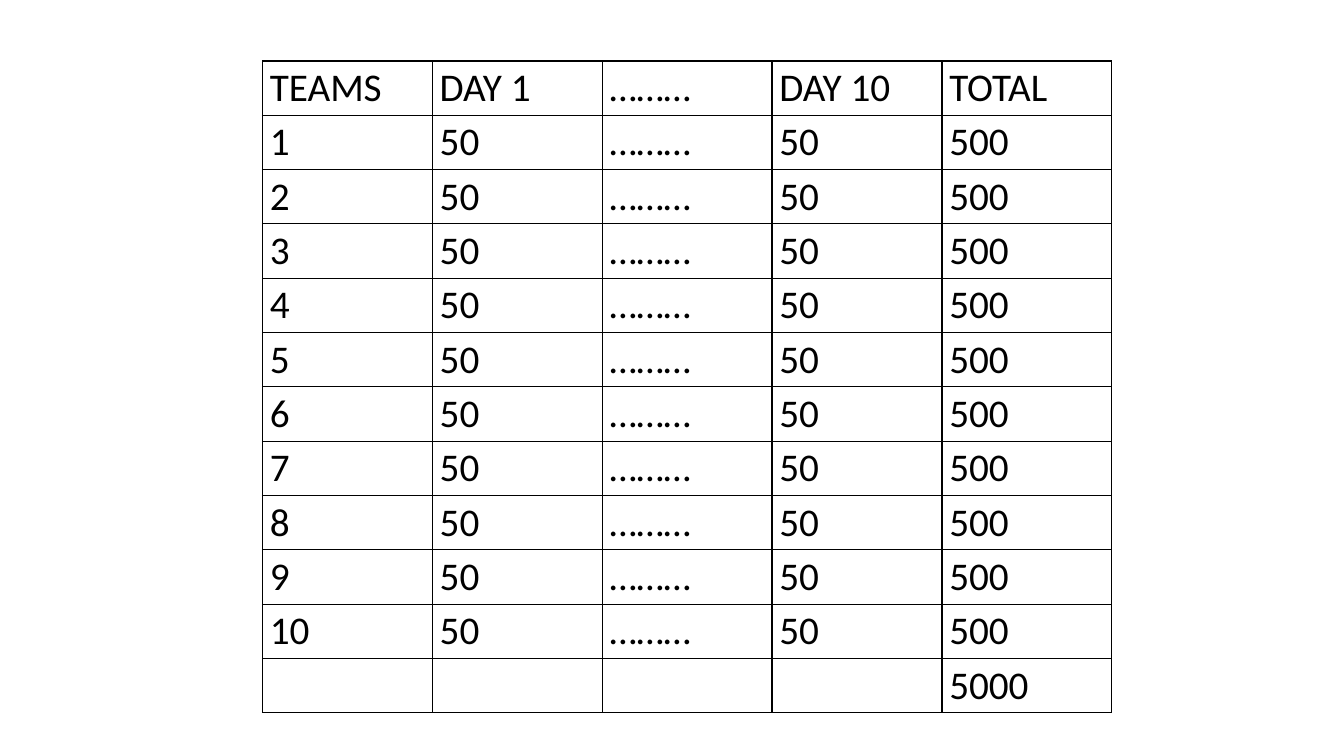
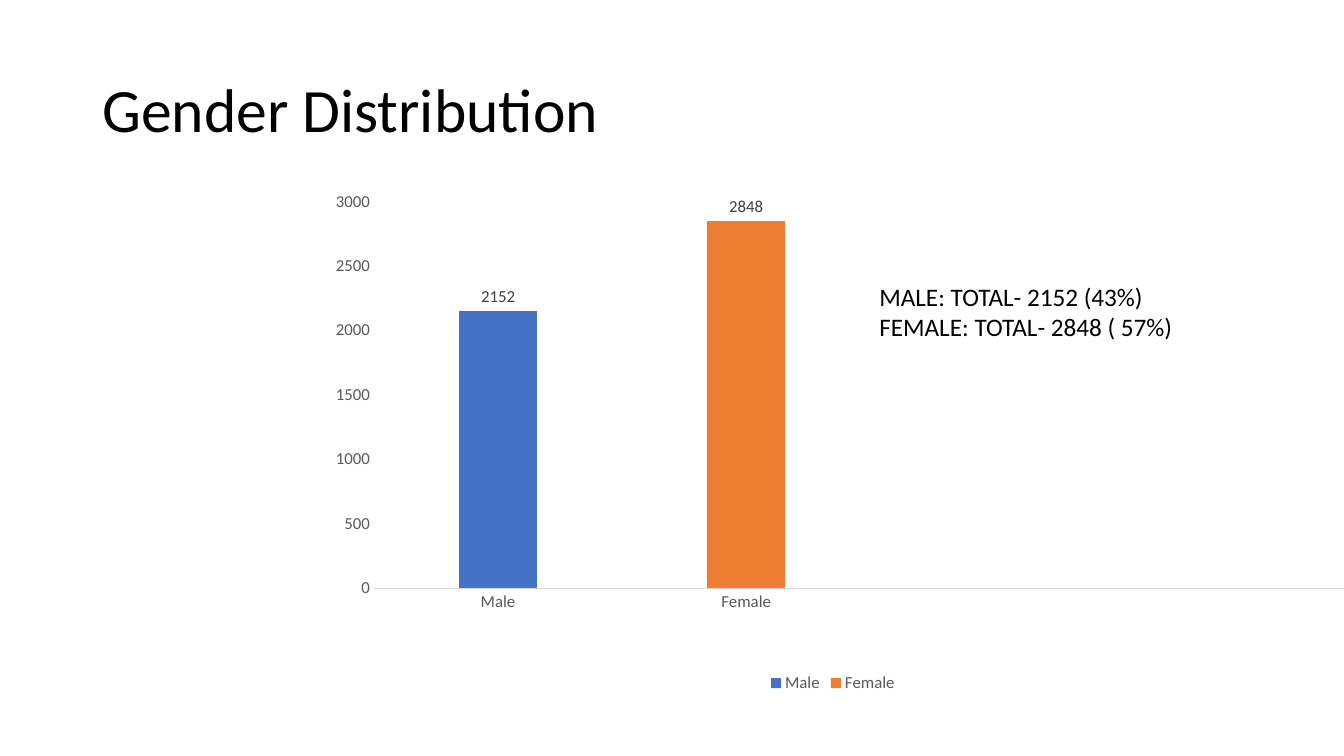
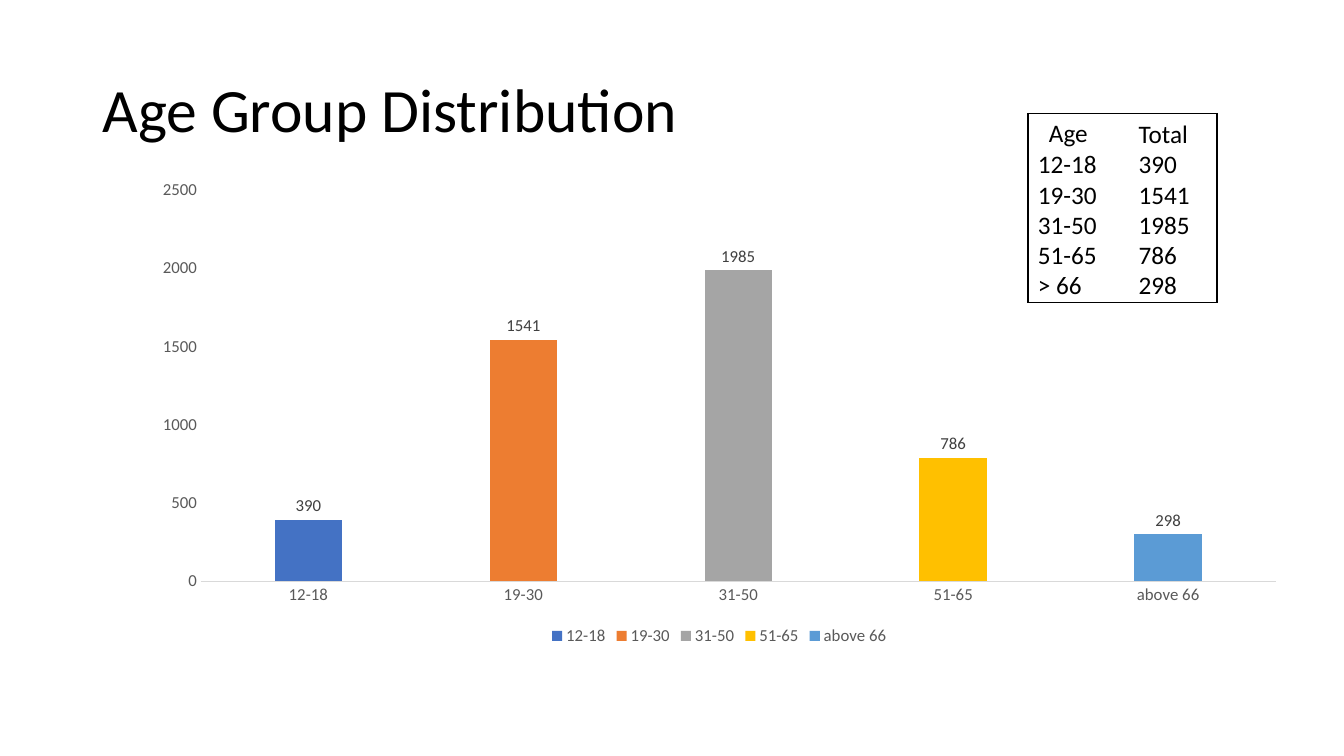
from lxml import etree
from pptx import Presentation
from pptx import util as u
from pptx.chart import data as chart_data
from pptx.dml.color import RGBColor
from pptx.enum import chart as chart_enum, text
from pptx.oxml import ns

PX = 9525
FONT = "Calibri"
BLACK = RGBColor(0, 0, 0)
AXIS_TEXT = RGBColor(0x59, 0x59, 0x59)
LABEL_TEXT = RGBColor(0x40, 0x40, 0x40)
AXIS_LINE = RGBColor(0xD9, 0xD9, 0xD9)
BAR_COLOURS = [
    RGBColor(0x44, 0x72, 0xC4),
    RGBColor(0xED, 0x7D, 0x31),
    RGBColor(0xA5, 0xA5, 0xA5),
    RGBColor(0xFF, 0xC0, 0x00),
    RGBColor(0x5B, 0x9B, 0xD5),
]

TITLE_BOX = (88, 38, 1104, 139)
TEAMS_BOX = (250, 58, 809, 621)
AGE_HEADING_BOX = (979, 108, 180, 180)
NOTE_TAB = 96

TEAM_ROWS = [
    ("TEAMS", "DAY 1", "………", "DAY 10", "TOTAL"),
    *[(str(team), "50", "………", "50", "500") for team in range(1, 11)],
    ("", "", "", "", "5000"),
]

CHART_SLIDES = [
    {
        "title": "Gender Distribution",
        "chart_box": (285, 145, 1017, 519),
        "values": [("Male", 2152), ("Female", 2848), ("", None), ("", None)],
        "plot_layout": {"x": 0.07, "y": 0.09, "w": 0.93, "h": 0.71},
        "note_box": (828, 263, 318, 97),
        "note": ["MALE: TOTAL- 2152 (43%)", "FEMALE: TOTAL- 2848 ( 57%)"],
    },
    {
        "title": "Age Group Distribution",
        "chart_box": (133, 162, 1104, 457),
        "values": [("12-18", 390), ("19-30", 1541), ("31-50", 1985),
                   ("51-65", 786), ("above 66", 298)],
        "plot_layout": None,
        "note_box": (979, 108, 215, 184),
        "note": ["\tTotal", "12-18\t390", "19-30\t1541", "31-50\t1985",
                 "51-65\t786", "> 66\t298"],
    },
]


def emu(box):
    return [u.Emu(length * PX) for length in box]


def set_all(target, values):
    for name, value in values.items():
        setattr(target, name, value)


def style_font(font, size, colour=BLACK):
    set_all(font, {"name": FONT, "size": u.Pt(size), "bold": False})
    font.color.rgb = colour


def add_child(parent, tag, **attributes):
    return etree.SubElement(parent, ns.qn(tag), attributes)


def outline_cell(cell):
    properties = cell._tc.get_or_add_tcPr()
    for side in ("a:lnL", "a:lnR", "a:lnT", "a:lnB"):
        line = add_child(properties, side, w=str(u.Pt(1)))
        fill = add_child(line, "a:solidFill")
        add_child(fill, "a:srgbClr", val=str(BLACK))
    cell.fill.background()


def add_grid(slide, box, rows, size, margins, paragraph_format):
    table = slide.shapes.add_table(len(rows), len(rows[0]), *emu(box)).table
    set_all(table, {"first_row": False, "horz_banding": False})
    for row_index, row in enumerate(rows):
        for column_index, words in enumerate(row):
            cell = table.cell(row_index, column_index)
            outline_cell(cell)
            set_all(cell, margins)
            paragraph = cell.text_frame.paragraphs[0]
            set_all(paragraph, paragraph_format)
            style_font(paragraph.font, size)
            if words:
                run = paragraph.add_run()
                run.text = words
                style_font(run.font, size)


def add_title(slide, words):
    title = slide.shapes.title
    set_all(title, dict(zip(("left", "top", "width", "height"), emu(TITLE_BOX))))
    title.text_frame.text = words
    title.text_frame.vertical_anchor = text.MSO_ANCHOR.MIDDLE
    paragraph = title.text_frame.paragraphs[0]
    set_all(paragraph, {"alignment": text.PP_ALIGN.LEFT, "line_spacing": 0.9})
    style_font(paragraph.runs[0].font, 44)


def add_tab_stop(paragraph, position):
    properties = paragraph._p.get_or_add_pPr()
    stops = add_child(properties, "a:tabLst")
    add_child(stops, "a:tab", pos=str(position * PX), algn="l")


def add_note(slide, box, lines):
    frame = slide.shapes.add_textbox(*emu(box)).text_frame
    frame.word_wrap = True
    frame.text = "\n".join(lines)
    for paragraph in frame.paragraphs:
        style_font(paragraph.runs[0].font, 18)
        if "\t" in paragraph.text:
            add_tab_stop(paragraph, NOTE_TAB)


def set_plot_layout(chart, fractions):
    plot_area = chart.element.xpath(".//c:plotArea")[0]
    for old_layout in plot_area.findall(ns.qn("c:layout")):
        plot_area.remove(old_layout)
    layout = etree.Element(ns.qn("c:layout"))
    plot_area.insert(0, layout)
    manual = add_child(layout, "c:manualLayout")
    add_child(manual, "c:layoutTarget", val="inner")
    for side in "xy":
        add_child(manual, f"c:{side}Mode", val="edge")
    for name, value in fractions.items():
        add_child(manual, f"c:{name}", val=str(value))


def hide_legend_entries(chart, indices):
    position = chart.element.xpath(".//c:legend/c:legendPos")[0]
    for index in reversed(indices):
        entry = etree.Element(ns.qn("c:legendEntry"))
        add_child(entry, "c:idx", val=str(index))
        add_child(entry, "c:delete", val="1")
        position.addnext(entry)


def add_bars(slide, box, values, plot_layout):
    data = chart_data.CategoryChartData()
    data.categories = [name for name, _ in values]
    data.add_series("Series 1", [value for _, value in values])
    chart = slide.shapes.add_chart(
        chart_enum.XL_CHART_TYPE.COLUMN_CLUSTERED, *emu(box), data).chart
    set_all(chart, {"has_title": False, "has_legend": True})
    style_font(chart.font, 10)

    set_all(chart.legend, {
        "position": chart_enum.XL_LEGEND_POSITION.BOTTOM,
        "include_in_layout": False,
    })
    style_font(chart.legend.font, 12, AXIS_TEXT)

    for axis in (chart.category_axis, chart.value_axis):
        set_all(axis, {
            "has_major_gridlines": False,
            "major_tick_mark": chart_enum.XL_TICK_MARK.NONE,
            "minor_tick_mark": chart_enum.XL_TICK_MARK.NONE,
        })
        style_font(axis.tick_labels.font, 12, AXIS_TEXT)
    chart.value_axis.format.line.fill.background()
    category_line = chart.category_axis.format.line
    category_line.color.rgb = AXIS_LINE
    category_line.width = u.Pt(0.75)

    plot = chart.plots[0]
    set_all(plot, {"gap_width": 219, "overlap": -27,
                   "vary_by_categories": True, "has_data_labels": True})
    set_all(plot.data_labels, {
        "show_value": True,
        "position": chart_enum.XL_LABEL_POSITION.OUTSIDE_END,
    })
    style_font(plot.data_labels.font, 12, LABEL_TEXT)
    for index, colour in zip(range(len(values)), BAR_COLOURS):
        fill = plot.series[0].points[index].format.fill
        fill.solid()
        fill.fore_color.rgb = colour

    if plot_layout:
        set_plot_layout(chart, plot_layout)
    hide_legend_entries(
        chart, [index for index, (name, _) in enumerate(values) if not name])


def main():
    presentation = Presentation()
    set_all(presentation, {"slide_width": 1280 * PX, "slide_height": 720 * PX})
    title_only, blank = presentation.slide_layouts[5], presentation.slide_layouts[6]

    teams_slide = presentation.slides.add_slide(blank)
    add_grid(teams_slide, TEAMS_BOX, TEAM_ROWS, 28,
             {"margin_left": 7 * PX, "margin_right": 7 * PX,
              "margin_top": 0, "margin_bottom": 0},
             {"line_spacing": 1.07, "space_after": u.Pt(8)})

    for content in CHART_SLIDES:
        slide = presentation.slides.add_slide(title_only)
        add_title(slide, content["title"])
        add_bars(slide, content["chart_box"], content["values"], content["plot_layout"])
        add_note(slide, content["note_box"], content["note"])

    add_grid(slide, AGE_HEADING_BOX, [("Age",)], 18, {"margin_left": 20 * PX}, {})
    presentation.save("out.pptx")


if __name__ == "__main__":
    main()
